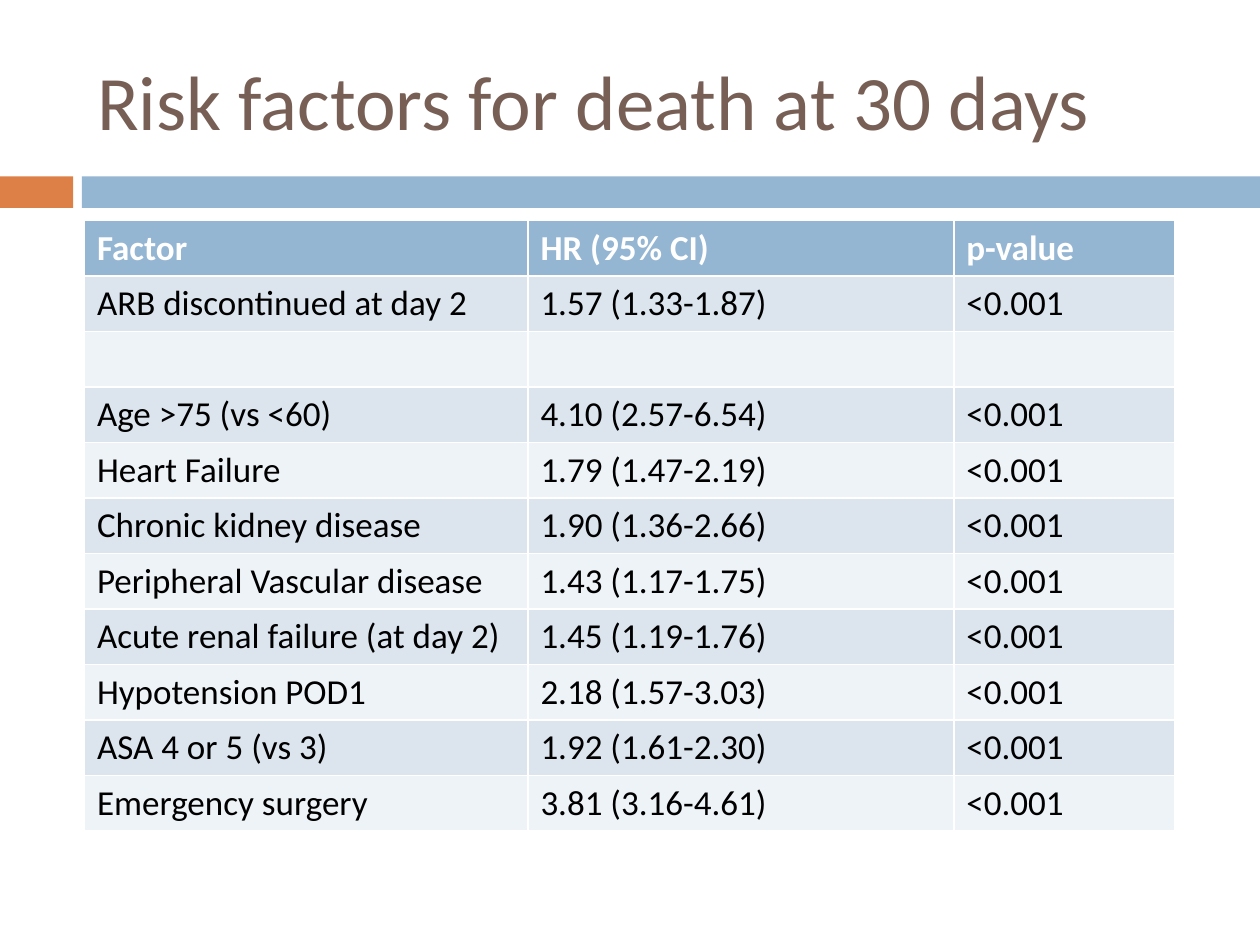
from pptx import Presentation
from pptx.dml.color import RGBColor
from pptx.enum.shapes import MSO_SHAPE
from pptx.enum.text import MSO_ANCHOR, PP_ALIGN
from pptx.util import Inches, Pt


def paint(fill, color):
    fill.solid()
    fill.fore_color.rgb = RGBColor.from_string(color)


def style(para, size, color, bold=False):
    for run in para.runs:
        run.font.name = "Calibri"
        run.font.size = Pt(size)
        run.font.bold = bold
        paint(run.font.fill, color)


deck = Presentation()
deck.slide_width, deck.slide_height = Inches(10), Inches(7.5)
slide = deck.slides.add_slide(deck.slide_layouts[5])

for left, width, color in [(0, 0.58, "DD8047"), (0.65, 9.35, "94B6D2")]:
    bar = slide.shapes.add_shape(
        MSO_SHAPE.RECTANGLE, Inches(left), Inches(1.4), Inches(width), Inches(0.25))
    bar.shadow.inherit = False
    paint(bar.fill, color)
    bar.line.fill.background()

title = slide.shapes.title
title.left, title.top = Inches(0.67), Inches(0.25)
title.width, title.height = Inches(8.92), Inches(1.08)
title.text_frame.text = "Risk factors for death at 30 days"
title.text_frame.vertical_anchor = MSO_ANCHOR.MIDDLE
head = title.text_frame.paragraphs[0]
head.alignment = PP_ALIGN.LEFT
style(head, 44, "775F55")

rows = [
    ("Factor", "HR (95% CI)", "p-value"),
    ("ARB discontinued at day 2", "1.57 (1.33-1.87)", "<0.001"),
    ("", "", ""),
    ("Age >75 (vs <60)", "4.10 (2.57-6.54)", "<0.001"),
    ("Heart Failure", "1.79 (1.47-2.19)", "<0.001"),
    ("Chronic kidney disease", "1.90 (1.36-2.66)", "<0.001"),
    ("Peripheral Vascular disease", "1.43 (1.17-1.75)", "<0.001"),
    ("Acute renal failure (at day 2)", "1.45 (1.19-1.76)", "<0.001"),
    ("Hypotension POD1", "2.18 (1.57-3.03)", "<0.001"),
    ("ASA 4 or 5 (vs 3)", "1.92 (1.61-2.30)", "<0.001"),
    ("Emergency surgery", "3.81 (3.16-4.61)", "<0.001"),
]
widths = [3.52, 3.38, 1.75]
high = 0.44
table = slide.shapes.add_table(
    len(rows), len(widths), Inches(0.67), Inches(1.75),
    Inches(sum(widths)), Inches(high * len(rows))).table
for col, width in zip(table.columns, widths):
    col.width = Inches(width)

for r, row in enumerate(rows):
    table.rows[r].height = Inches(high)
    top = r == 0
    shade = "94B6D2" if top else ("EEF3F7", "DCE5EE")[r % 2]
    for c, text in enumerate(row):
        cell = table.cell(r, c)
        paint(cell.fill, shade)
        if text:
            cell.text_frame.text = text
            style(cell.text_frame.paragraphs[0], 20, "FFFFFF" if top else "000000", top)

deck.save("out.pptx")
